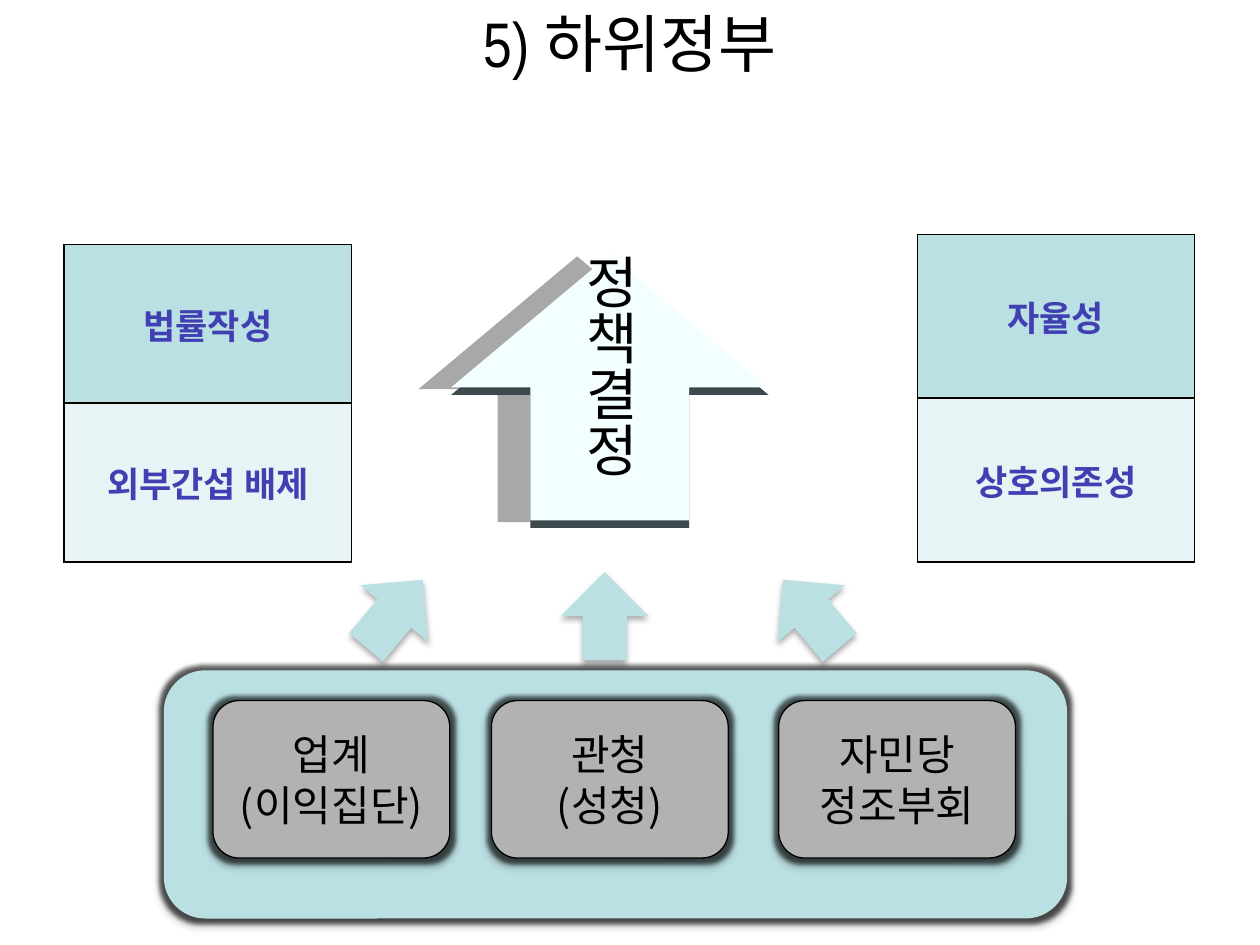
from dataclasses import dataclass

from lxml.etree import SubElement
from pptx import Presentation
from pptx.dml.color import RGBColor
from pptx.enum.shapes import MSO_SHAPE as Preset
from pptx.enum.text import MSO_ANCHOR as Anchor, PP_ALIGN as Align
from pptx.oxml.ns import qn
from pptx.util import Inches, Pt


@dataclass(frozen=True)
class Theme:
    aqua: str = "BBE0E3"
    pale: str = "E7F3F4"
    arrow_face: str = "F3FFFF"
    arrow_edge: str = "3D4A4D"
    arrow_shadow: str = "A8A8A8"
    gray: str = "B2B2B2"
    ink: str = "000000"
    indigo: str = "4040B3"
    korean: str = "Noto Sans CJK KR"
    title_font: str = "Arial Narrow"
    arrow_font: str = "Arial"
    title_size: int = 36
    arrow_size: int = 32
    actor_size: int = 24
    cell_size: int = 20


@dataclass(frozen=True)
class Shadow:
    color: str
    opacity: int
    blur: float
    distance: float
    angle: int


@dataclass(frozen=True)
class Actor:
    left: float
    lines: tuple[str, ...]


@dataclass(frozen=True)
class SmallArrow:
    left: float
    top: float
    rotation: int


@dataclass(frozen=True)
class Traits:
    left: float
    top: float
    width: float
    row_height: float
    labels: tuple[str, str]


THEME = Theme()
SOFT = Shadow(THEME.ink, 32, 3.5, 2.2, 90)
CAST = Shadow(THEME.arrow_shadow, 100, 0, 19, 190)
HALO_RADIUS = 5
ACTORS = (
    Actor(1.69, ("업계", "(이익집단)")),
    Actor(3.9, ("관청", "(성청)")),
    Actor(6.18, ("자민당 정조부회",)),
)
SMALL_ARROWS = (
    SmallArrow(4.45, 4.54, 0),
    SmallArrow(6.09, 4.52, 320),
    SmallArrow(2.78, 4.52, 40),
)
TRAITS = (
    Traits(0.51, 1.94, 2.28, 1.26, ("법률작성", "외부간섭 배제")),
    Traits(7.28, 1.86, 2.2, 1.3, ("자율성", "상호의존성")),
)


def rgb(color: str) -> RGBColor:
    return RGBColor.from_string(color)


def add_color(parent, color: str, opacity: int) -> None:
    node = SubElement(parent, qn("a:srgbClr"), val=color)
    SubElement(node, qn("a:alpha"), val=str(opacity * 1000))


def paint(shape, fill: str, shadow: Shadow | None = None, halo: bool = False,
          line: str | None = None) -> None:
    shape.fill.solid()
    shape.fill.fore_color.rgb = rgb(fill)
    if line:
        shape.line.color.rgb = rgb(line)
        shape.line.width = Pt(0.75)
    else:
        shape.line.fill.background()
    shape.shadow.inherit = False
    effects = shape._element.spPr.find(qn("a:effectLst"))
    if halo:
        glow = SubElement(effects, qn("a:glow"), rad=str(Pt(HALO_RADIUS)))
        add_color(glow, THEME.ink, 60)
    if shadow:
        outer = SubElement(effects, qn("a:outerShdw"), blurRad=str(Pt(shadow.blur)),
                           dist=str(Pt(shadow.distance)), dir=str(shadow.angle * 60000),
                           rotWithShape="0")
        add_color(outer, shadow.color, shadow.opacity)


def write(frame, lines: tuple[str, ...], size: int, font: str = THEME.korean,
          color: str = THEME.ink, bold: bool = False) -> None:
    frame.text = "\n".join(lines)
    for para in frame.paragraphs:
        para.alignment = Align.CENTER
        for run in para.runs:
            run.font.size = Pt(size)
            run.font.name = font
            run.font.bold = bold
            run.font.color.rgb = rgb(color)
            SubElement(run._r.get_or_add_rPr(), qn("a:ea"), typeface=THEME.korean)


def add_title(slide, text: str) -> None:
    title = slide.shapes.title
    title.left, title.top = Inches(0), Inches(0)
    title.width, title.height = Inches(10), Inches(0.67)
    title.text_frame.vertical_anchor = Anchor.MIDDLE
    write(title.text_frame, (text,), THEME.title_size, THEME.title_font)


def add_panel(slide) -> None:
    panel = slide.shapes.add_shape(Preset.ROUNDED_RECTANGLE, Inches(1.3), Inches(5.32),
                                   Inches(7.17), Inches(1.97))
    paint(panel, THEME.aqua, SOFT, halo=True)


def add_arrow_outline(slide, top: float):
    left, width, height = 3.58, 2.52, 2.11
    points = [(left + width * x, top + height * y) for x, y in (
        (0, 0.5), (0.5, 0), (1, 0.5), (0.75, 0.5), (0.75, 1), (0.25, 1), (0.25, 0.5))]
    corners = [(Inches(x), Inches(y)) for x, y in points]
    builder = slide.shapes.build_freeform(*corners[0])
    builder.add_line_segments(corners[1:], close=True)
    return builder.convert_to_shape()


def add_decision_arrow(slide, text: str) -> None:
    """Draw a thick arrow: a dark lower edge behind a pale face with vertical text."""
    top, thickness = 2.02, 0.06
    paint(add_arrow_outline(slide, top + thickness), THEME.arrow_edge, CAST)
    face = add_arrow_outline(slide, top)
    paint(face, THEME.arrow_face)
    frame = face.text_frame
    frame.margin_top = frame.margin_bottom = 0
    frame.vertical_anchor = Anchor.MIDDLE
    frame._txBody.bodyPr.set("vert", "eaVert")
    write(frame, (text,), THEME.arrow_size, THEME.arrow_font)


def add_actor(slide, actor: Actor) -> None:
    box = slide.shapes.add_shape(Preset.ROUNDED_RECTANGLE, Inches(actor.left), Inches(5.56),
                                 Inches(1.88), Inches(1.25))
    paint(box, THEME.gray, SOFT, halo=True, line=THEME.ink)
    frame = box.text_frame
    frame.word_wrap = True
    frame.margin_left = frame.margin_right = Inches(0.15)
    frame.vertical_anchor = Anchor.MIDDLE
    write(frame, actor.lines, THEME.actor_size)


def add_small_arrow(slide, arrow: SmallArrow) -> None:
    shape = slide.shapes.add_shape(Preset.UP_ARROW, Inches(arrow.left), Inches(arrow.top),
                                   Inches(0.7), Inches(0.7))
    shape.rotation = arrow.rotation
    paint(shape, THEME.aqua, SOFT)


def add_borders(cell) -> None:
    properties = cell._tc.get_or_add_tcPr()
    for side in ("lnL", "lnR", "lnT", "lnB"):
        border = SubElement(properties, qn(f"a:{side}"), w=str(Pt(1)))
        add_color(SubElement(border, qn("a:solidFill")), THEME.ink, 100)


def add_traits(slide, traits: Traits) -> None:
    rows = len(traits.labels)
    table = slide.shapes.add_table(rows, 1, Inches(traits.left), Inches(traits.top),
                                   Inches(traits.width),
                                   Inches(traits.row_height * rows)).table
    for row, label, fill in zip(table.rows, traits.labels, (THEME.aqua, THEME.pale)):
        cell = row.cells[0]
        add_borders(cell)
        cell.fill.solid()
        cell.fill.fore_color.rgb = rgb(fill)
        cell.vertical_anchor = Anchor.MIDDLE
        write(cell.text_frame, (label,), THEME.cell_size, color=THEME.indigo, bold=True)


def main() -> None:
    deck = Presentation()
    deck.slide_width, deck.slide_height = Inches(10), Inches(7.5)
    slide = deck.slides.add_slide(deck.slide_layouts.get_by_name("Title Only"))
    add_title(slide, "5) 하위정부")
    add_panel(slide)
    add_decision_arrow(slide, "정책결정")
    for actor in ACTORS:
        add_actor(slide, actor)
    for arrow in SMALL_ARROWS:
        add_small_arrow(slide, arrow)
    for traits in TRAITS:
        add_traits(slide, traits)
    deck.save("out.pptx")


if __name__ == "__main__":
    main()
